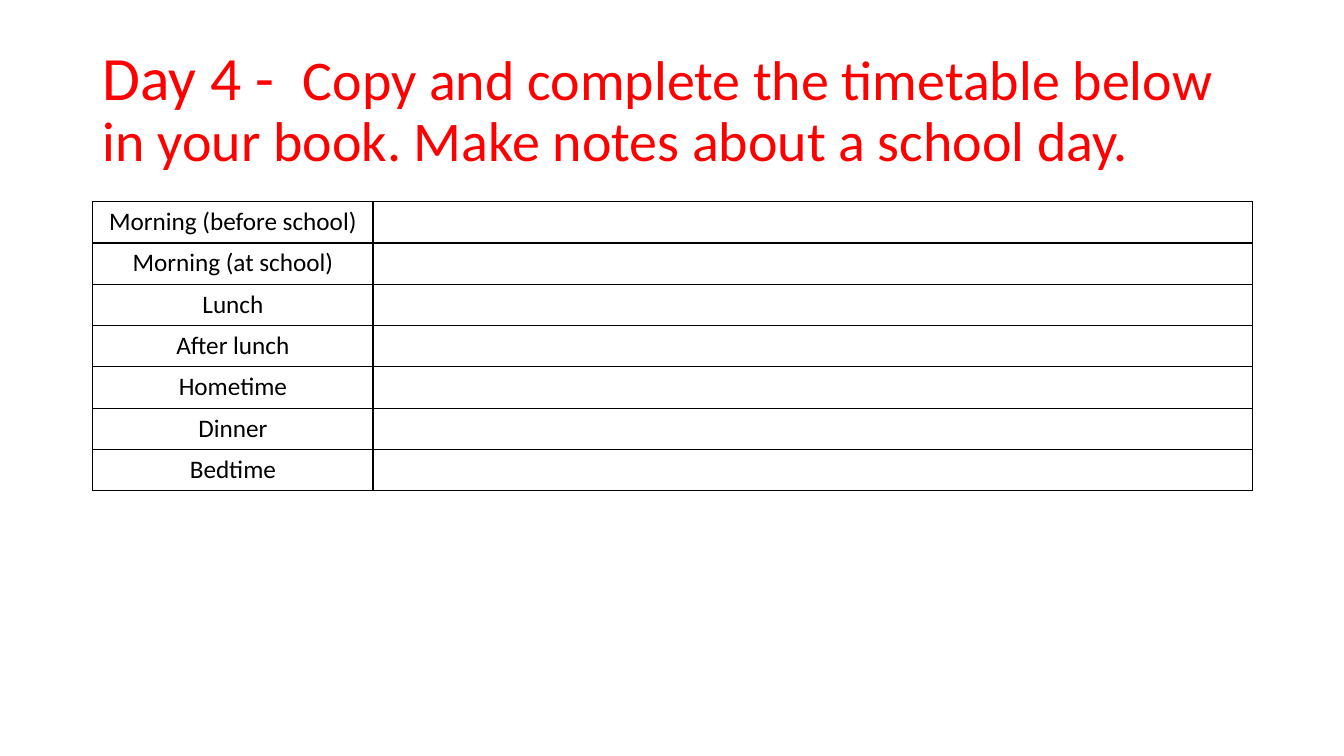
from dataclasses import dataclass

from lxml import etree
from pptx import Presentation
from pptx import util as u
from pptx.dml.color import RGBColor
from pptx.enum import text
from pptx.oxml.ns import qn


@dataclass(frozen=True)
class Theme:
    font: str = "Calibri"
    title_color: str = "FF0000"
    ink: str = "000000"
    lead_size: int = 44
    title_size: int = 40
    body_size: int = 18
    border: int = 1


THEME = Theme()
W, H = 13.33, 7.5
MARGIN, CONTENT_W = 0.92, 11.5
ROW_H = 0.41
LABEL_SHARE = 2.78 / CONTENT_W

TITLE = [
    ("Day 4 -  ", THEME.lead_size),
    ("Copy and complete the timetable below in your book. "
     "Make notes about a school day.", THEME.title_size),
]
TIMES = ["Morning (before school)", "Morning (at school)", "Lunch",
         "After lunch", "Hometime", "Dinner", "Bedtime"]


def add_title(slide, left, top, width, height):
    sp = slide.shapes.add_textbox(*map(u.Inches, (left, top, width, height)))
    tf = sp.text_frame
    tf.word_wrap = True
    tf.vertical_anchor = text.MSO_ANCHOR.MIDDLE
    p = tf.paragraphs[0]
    p.line_spacing = 0.9
    p.font.name = THEME.font
    p.font.color.rgb = RGBColor.from_string(THEME.title_color)
    for words, size in TITLE:
        r = p.add_run()
        r.text = words
        r.font.size = u.Pt(size)


def set_borders(cell):
    tc_pr = cell._tc.get_or_add_tcPr()
    for i, side in enumerate(("a:lnL", "a:lnR", "a:lnT", "a:lnB")):
        ln = etree.Element(qn(side), w=str(u.Pt(THEME.border)))
        fill = etree.SubElement(ln, qn("a:solidFill"))
        etree.SubElement(fill, qn("a:srgbClr"), val=THEME.ink)
        tc_pr.insert(i, ln)


def style_cell(cell):
    cell.fill.background()
    set_borders(cell)
    p = cell.text_frame.paragraphs[0]
    p.alignment = text.PP_ALIGN.CENTER
    p.font.name = THEME.font
    p.font.size = u.Pt(THEME.body_size)
    p.font.color.rgb = RGBColor.from_string(THEME.ink)


def add_timetable(slide, left, top, width, row_height):
    box = left, top, width, row_height * len(TIMES)
    table = slide.shapes.add_table(len(TIMES), 2, *map(u.Inches, box)).table
    table.first_row = table.horz_banding = False
    for column, share in zip(table.columns, (LABEL_SHARE, 1 - LABEL_SHARE)):
        column.width = u.Inches(width * share)
    for i, time in enumerate(TIMES):
        table.cell(i, 0).text = time
    for cell in table.iter_cells():
        style_cell(cell)


def main():
    prs = Presentation()
    prs.slide_width, prs.slide_height = u.Inches(W), u.Inches(H)
    slide = prs.slides.add_slide(prs.slide_layouts[6])

    # Instruction heading
    add_title(slide, MARGIN, 0.37, CONTENT_W, 1.45)
    # Timetable with a blank notes column
    add_timetable(slide, MARGIN, 2, CONTENT_W, ROW_H)

    prs.save("out.pptx")


if __name__ == "__main__":
    main()
